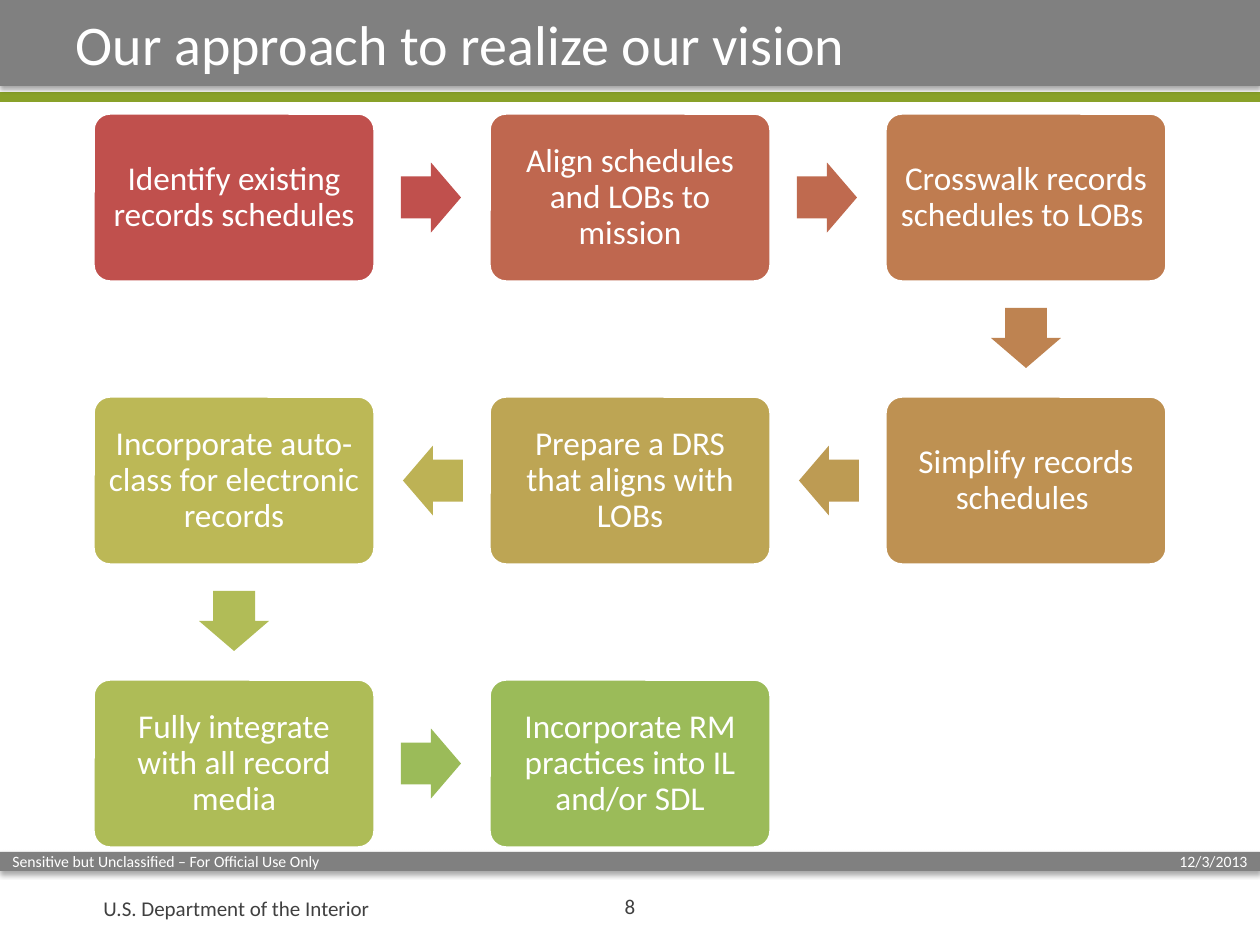
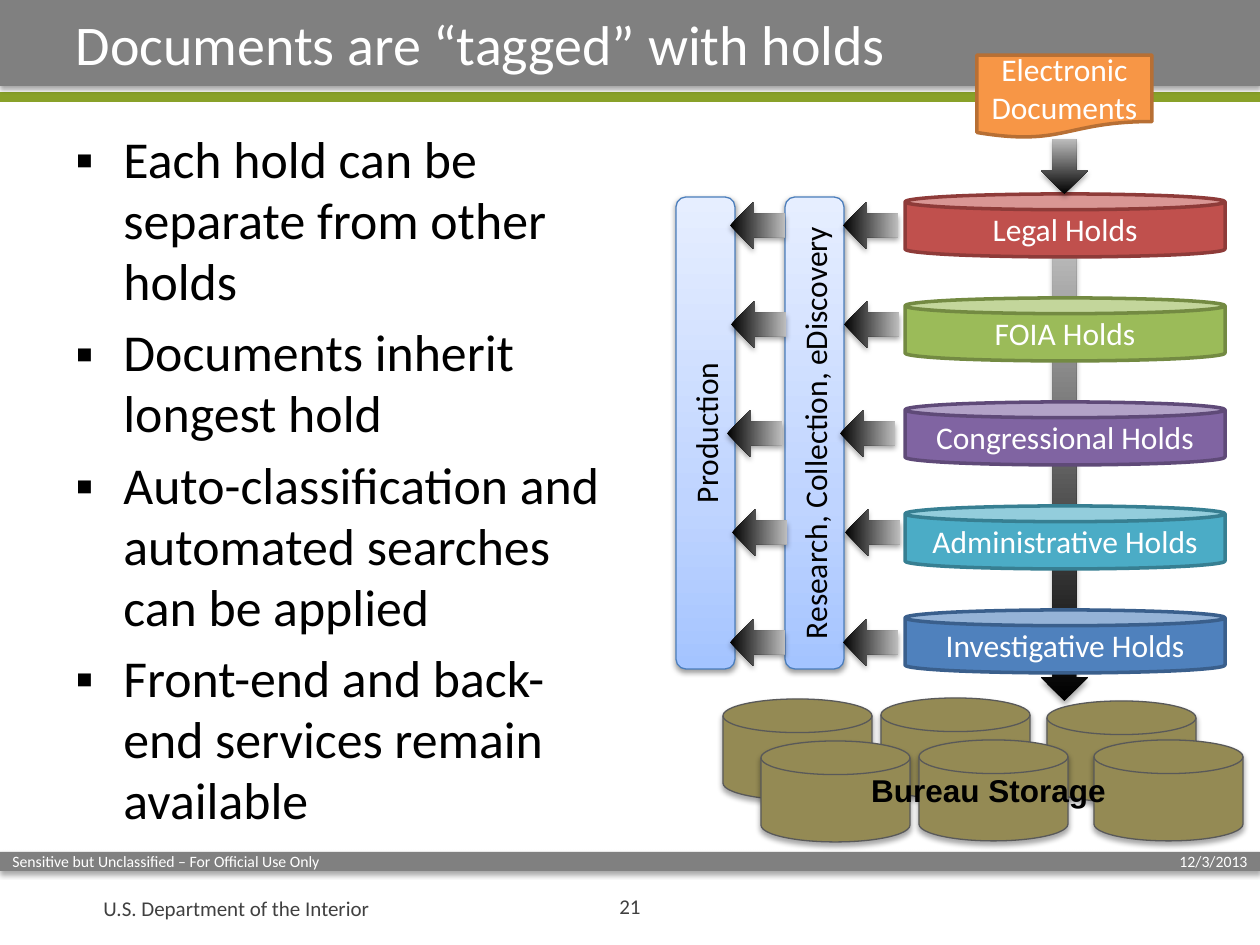
from lxml.etree import SubElement
from pptx import Presentation
from pptx.dml.color import RGBColor
from pptx.enum.shapes import MSO_CONNECTOR, MSO_SHAPE
from pptx.enum.text import MSO_ANCHOR, MSO_AUTO_SIZE, PP_ALIGN
from pptx.oxml.ns import qn
from pptx.util import Emu, Pt

PX_PER_INCH = 126
WIDTH, HEIGHT = 1260, 945

# Shared colours and wording
GREY, GREEN, DARK, WHITE, BLACK = "808080", "89A129", "404040", "FFFFFF", "000000"
DEPARTMENT = "U.S. Department of the Interior"
MARKING = "Sensitive but Unclassified – For Official Use Only"
DATE = "12/3/2013"

# Approach: (text, column, row, box colour, colour of the arrow to the next step)
APPROACH_TITLE = "Our approach to realize our vision"
STEPS = [
    ("Identify existing records schedules", 0, 0, "C0504D", "C0504D"),
    ("Align schedules and LOBs to mission", 1, 0, "BF674F", "BF6A4F"),
    ("Crosswalk records schedules to LOBs ", 2, 0, "BF7C50", "BE8351"),
    ("Simplify records schedules ", 2, 1, "BE9152", "BD9B53"),
    ("Prepare a DRS that aligns with LOBs", 1, 1, "BDA554", "BDB255"),
    ("Incorporate auto-class for electronic records", 0, 1, "BCB856", "B1BC57"),
    ("Fully integrate with all record media", 0, 2, "AEBC57", "9BBB59"),
    ("Incorporate RM practices into IL and/or SDL", 1, 2, "9BBB59", None),
]
ROTATION = {(1, 0): 0, (0, 1): 90, (-1, 0): 180}

# Holds
HOLDS_TITLE = "Documents are “tagged” with holds"
BULLETS = [
    "Each hold can be separate from other holds",
    "Documents inherit longest hold",
    "Auto-classification and automated searches can be applied",
    "Front-end and back-end services remain available",
]
HOLDS = [
    ("Legal Holds", "C0504D", "8E3B39"),
    ("FOIA Holds", "9BBB59", "738A42"),
    ("Congressional Holds", "8064A2", "5F4A78"),
    ("Administrative Holds", "4BACC6", "377F92"),
    ("Investigative Holds", "4F81BD", "3A5F8C"),
]
STAGES = [("Research, Collection, eDiscovery", 785), ("Production", 676)]
STORAGE_DISKS = [(723, 699), (881, 698), (1047, 701), (761, 741), (919, 740), (1094, 740)]
STAGE_ARROW_COLUMNS = [847, 734]
STAGE_ARROW_ROWS = [(0, 198), (1, 297), (-3, 406), (2, 505), (0, 615)]
ARROW_STOPS = [(0, BLACK), (100, "BDBDBD")]
STAGE_STOPS = [(0, "A4C4FF"), (35, "BFD4FF"), (100, "E6EEFF")]


def px(length):
    return Emu(round(length * 914400 / PX_PER_INCH))


def color(code):
    return RGBColor.from_string(code)


def write(shape, text, size=18, ink=WHITE, font="Calibri", bold=False,
          align=PP_ALIGN.CENTER, anchor=MSO_ANCHOR.MIDDLE, spacing=None,
          before=0, bullet=None, margin=None):
    """Fill a shape with one paragraph per line of text."""
    frame = shape.text_frame
    frame.word_wrap = True
    frame.auto_size = MSO_AUTO_SIZE.NONE
    frame.vertical_anchor = anchor
    if margin is not None:
        frame.margin_left = frame.margin_right = px(margin)
        frame.margin_top = frame.margin_bottom = px(margin)
    for index, line in enumerate(text.split("\n")):
        para = frame.paragraphs[0] if index == 0 else frame.add_paragraph()
        para.alignment = align
        if spacing:
            para.line_spacing = spacing
        if before and index:
            para.space_before = Pt(before)
        if bullet:
            properties = para._p.get_or_add_pPr()
            properties.set("marL", str(px(48)))
            properties.set("indent", str(-px(48)))
            SubElement(properties, qn("a:buFont"), typeface="Arial")
            SubElement(properties, qn("a:buChar"), char=bullet)
        span = para.add_run()
        span.text = line
        span.font.size = Pt(size)
        span.font.name = font
        span.font.bold = bold
        span.font.color.rgb = color(ink)


def add_text(page, text, left, top, width, height, **style):
    box = page.shapes.add_textbox(px(left), px(top), px(width), px(height))
    write(box, text, **style)
    return box


def fill_gradient(shape, stops):
    """Blend the stops from the bottom of the shape to its top."""
    shape.fill.gradient()
    shape.fill.gradient_angle = 90
    stop_list = shape._element.spPr.find(qn("a:gradFill")).find(qn("a:gsLst"))
    for old_stop in list(stop_list):
        stop_list.remove(old_stop)
    for position, code in stops:
        stop = SubElement(stop_list, qn("a:gs"), pos=str(position * 1000))
        SubElement(stop, qn("a:srgbClr"), val=code)


def add_shadow(shape, opacity=35, distance=1.8):
    effects = shape._element.spPr.find(qn("a:effectLst"))
    shadow = SubElement(effects, qn("a:outerShdw"), blurRad=str(Pt(3.1)),
                        dist=str(Pt(distance)), dir="5400000", rotWithShape="0")
    shade = SubElement(shadow, qn("a:srgbClr"), val=BLACK)
    SubElement(shade, qn("a:alpha"), val=str(opacity * 1000))


def add_box(page, kind, left, top, width, height, fill, line=None, weight=2,
            rotation=0, adjust=()):
    """Add a preset shape; fill is a colour or a list of gradient stops."""
    box = page.shapes.add_shape(kind, px(left), px(top), px(width), px(height))
    box.shadow.inherit = False
    box.rotation = rotation
    for index, value in enumerate(adjust):
        box.adjustments[index] = value
    if isinstance(fill, str):
        box.fill.solid()
        box.fill.fore_color.rgb = color(fill)
    else:
        fill_gradient(box, fill)
    if line:
        box.line.color.rgb = color(line)
        box.line.width = Pt(weight)
    else:
        box.line.fill.background()
    return box


def add_page(deck, title_text, number):
    """Add a page with its bands, footer, number and title."""
    page = deck.slides.add_slide(deck.slide_layouts[5])
    add_shadow(add_box(page, MSO_SHAPE.RECTANGLE, 0, 852, WIDTH, 19, GREY))
    add_text(page, DEPARTMENT, 91, 889, 324, 38, size=12, ink=DARK, align=PP_ALIGN.LEFT)
    rule = page.shapes.add_connector(MSO_CONNECTOR.STRAIGHT, 0, px(97), px(WIDTH), px(97))
    rule.line.color.rgb = color(GREEN)
    rule.line.width = Pt(6)
    SubElement(rule._element.spPr, qn("a:effectLst"))
    add_shadow(add_box(page, MSO_SHAPE.RECTANGLE, 0, -1, WIDTH, 87, GREY))
    for text, left, align in ((MARKING, 0, PP_ALIGN.LEFT), (DATE, 769, PP_ALIGN.RIGHT)):
        add_text(page, text, left, 846, 491, 31, size=9, align=align)
    add_text(page, number, 536, 878, 188, 57, size=12, ink=DARK)

    title = page.shapes.title
    title.left, title.top, title.width, title.height = px(63), 0, px(1134), px(87)
    write(title, title_text, size=32, align=PP_ALIGN.LEFT)
    # The title has to lie above the band
    title._element.getparent().append(title._element)
    return page


def build_approach(deck):
    page = add_page(deck, APPROACH_TITLE, "8")
    left, top, column_pitch, row_pitch = 93, 113, 396, 283
    box_width, box_height, arrow_width, arrow_height = 282, 169, 60, 70

    for index, (text, column, row, fill, arrow_fill) in enumerate(STEPS):
        box_left, box_top = left + column * column_pitch, top + row * row_pitch
        box = add_box(page, MSO_SHAPE.ROUNDED_RECTANGLE, box_left, box_top,
                      box_width, box_height, fill, line=WHITE, adjust=[0.1])
        write(box, text, size=19, spacing=0.9, margin=10)
        if arrow_fill is None:
            continue
        # The arrow sits halfway to the next box, a pixel nearer to this one
        _, next_column, next_row, _, _ = STEPS[index + 1]
        across, down = next_column - column, next_row - row
        center_x = box_left + box_width / 2 + across * (column_pitch / 2 - 1)
        center_y = box_top + box_height / 2 + down * (row_pitch / 2 - 1)
        add_box(page, MSO_SHAPE.RIGHT_ARROW, center_x - arrow_width / 2,
                center_y - arrow_height / 2, arrow_width, arrow_height, arrow_fill,
                rotation=ROTATION[across, down], adjust=[0.6, 0.5])


def add_flow_arrow(page, left, top, height=55, rotation=0):
    add_shadow(add_box(page, MSO_SHAPE.DOWN_ARROW, left, top, 47, height,
                       ARROW_STOPS, rotation=rotation))


def build_holds(deck):
    page = add_page(deck, HOLDS_TITLE, "21")
    body = add_text(page, "\n".join(BULLETS), 63, 120, 567, 735, size=29.6, ink=BLACK,
                    align=PP_ALIGN.LEFT, anchor=MSO_ANCHOR.TOP, spacing=0.98,
                    before=6, bullet="▪")
    body.text_frame.margin_top = px(10)

    # Storage below the long arrow
    add_flow_arrow(page, 1041, 242, height=459)
    for left, top in STORAGE_DISKS:
        add_shadow(add_box(page, MSO_SHAPE.FLOWCHART_MAGNETIC_DISK, left, top, 149, 101,
                           "948A54", line="595959", weight=0.75))
    add_text(page, "Bureau Storage", 730, 765, 517, 50, ink=BLACK, font="Arial",
             bold=True, anchor=MSO_ANCHOR.TOP)

    # Holds and the stages they feed
    for index, (text, fill, line) in enumerate(HOLDS):
        write(add_box(page, MSO_SHAPE.CAN, 905, 194 + 104 * index, 320, 63, fill, line=line),
              text)
    for text, left in STAGES:
        bar = add_box(page, MSO_SHAPE.ROUNDED_RECTANGLE, left, 197, 59, 472,
                      STAGE_STOPS, line="4B7EBC", weight=0.75)
        add_shadow(bar, opacity=38, distance=1.6)
        write(bar, text, ink=BLACK)
        bar.text_frame._txBody.bodyPr.set("vert", "vert270")

    # Incoming documents and arrows
    source = add_box(page, MSO_SHAPE.FLOWCHART_DOCUMENT, 977, 55, 175, 83,
                     "F79646", line="B76F34")
    write(source, "Electronic\nDocuments")
    add_flow_arrow(page, 1041, 139)
    for column in STAGE_ARROW_COLUMNS:
        for shift, top in STAGE_ARROW_ROWS:
            add_flow_arrow(page, column + shift, top, rotation=90)


def main():
    deck = Presentation()
    deck.slide_width, deck.slide_height = px(WIDTH), px(HEIGHT)
    build_approach(deck)
    build_holds(deck)
    deck.save("out.pptx")


if __name__ == "__main__":
    main()
